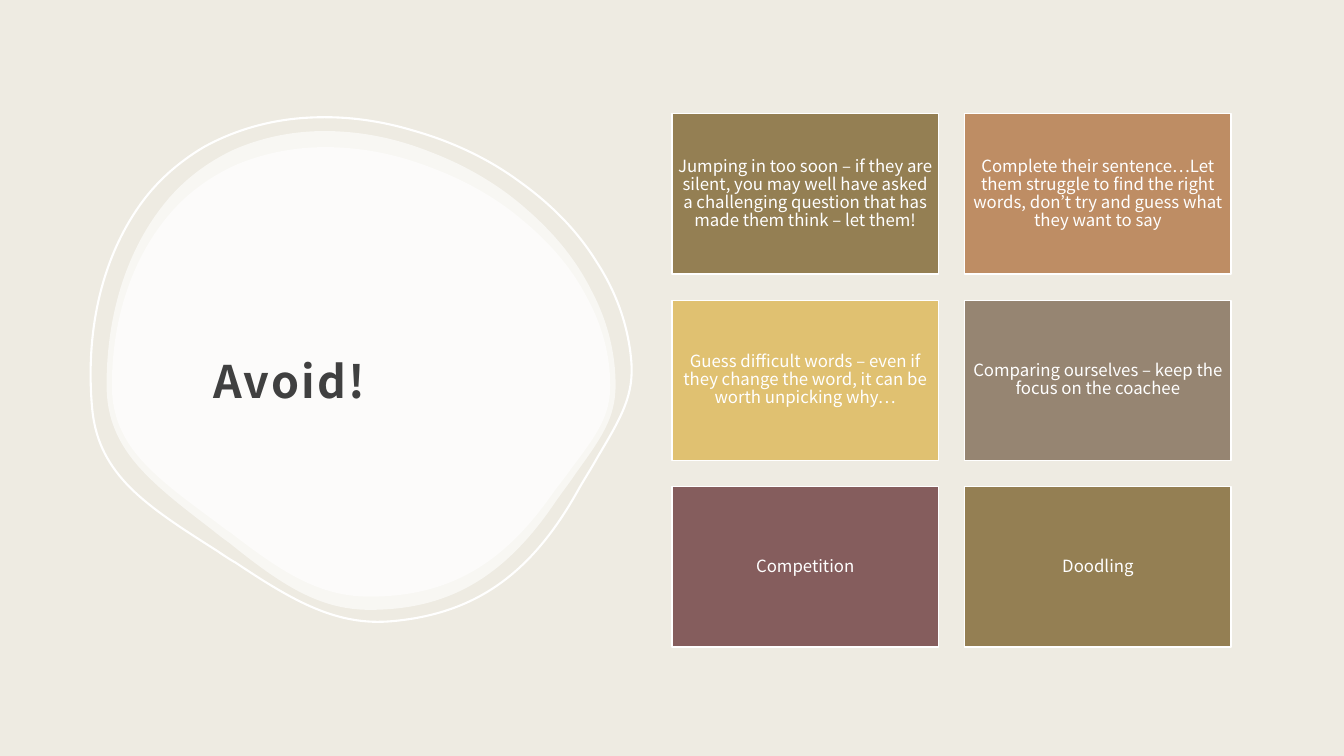
from dataclasses import dataclass
from itertools import chain

from lxml.etree import SubElement
from pptx import Presentation
from pptx.dml.color import RGBColor
from pptx.enum.shapes import MSO_SHAPE as Preset
from pptx.enum.text import MSO_ANCHOR as Anchor, MSO_AUTO_SIZE as AutoSize, PP_ALIGN as Align
from pptx.oxml.ns import qn
from pptx.util import Pt


@dataclass(frozen=True)
class Theme:
    font: str = "Noto Sans CJK JP"
    background: str = "EEEBE2"
    white: str = "FFFFFF"
    title: str = "404040"
    olive: str = "947F53"
    copper: str = "BE8D64"
    gold: str = "E0C171"
    taupe: str = "968572"
    plum: str = "855D5D"
    title_size: float = 32
    card_size: float = 12


THEME = Theme()

CARDS = [
    ("Jumping in too soon – if they are silent, you may well have asked a challenging "
     "question that has made them think – let them!", THEME.olive),
    ("Complete their sentence…Let them struggle to find the right words, "
     "don’t try and guess what they want to say", THEME.copper),
    ("Guess difficult words – even if they change the word, "
     "it can be worth unpicking why…", THEME.gold),
    ("Comparing ourselves – keep the focus on the coachee", THEME.taupe),
    ("Competition", THEME.plum),
    ("Doodling", THEME.olive),
]

PEBBLE_SIZE = (505, 475)
PEBBLE_START = (216, 0)
PEBBLE_CURVES = [
    ((183, 0), (152, 7), (125, 19)),
    ((100, 31), (77, 48), (59, 70)),
    ((21, 116), (0, 180), (0, 252)),
    ((0, 280), (8, 303), (26, 326)),
    ((45, 350), (74, 372), (104, 395)),
    ((109, 399), (115, 404), (121, 408)),
    ((172, 449), (210, 475), (261, 475)),
    ((339, 475), (395, 443), (446, 367)),
    ((453, 357), (460, 348), (466, 339)),
    ((492, 303), (505, 284), (505, 252)),
    ((505, 220), (497, 188), (481, 158)),
    ((466, 128), (444, 101), (416, 77)),
    ((389, 53), (356, 34), (322, 21)),
    ((287, 7), (252, 0), (216, 0)),
]


def rgb(color):
    return RGBColor.from_string(color)


def bend_segments(shape):
    segments = list(shape._element.iter(qn("a:lnTo")))
    outline = segments[0].getparent()
    for first in range(0, len(segments), 3):
        curve = SubElement(outline, qn("a:cubicBezTo"))
        segments[first].addprevious(curve)
        for segment in segments[first:first + 3]:
            curve.append(segment[0])
            outline.remove(segment)


def add_pebble(slide, box):
    left, top, width, height = box
    scale_x, scale_y = width / PEBBLE_SIZE[0], height / PEBBLE_SIZE[1]
    points = [(Pt(left + x * scale_x), Pt(top + y * scale_y))
              for x, y in chain([PEBBLE_START], *PEBBLE_CURVES)]
    builder = slide.shapes.build_freeform(*points[0], scale=1.0)
    builder.add_line_segments(points[1:], close=True)
    shape = builder.convert_to_shape()
    bend_segments(shape)
    shape.shadow.inherit = False
    return shape


def add_backdrop(slide, box):
    left, top, width, height = box
    for inset_x, inset_top, inset_bottom in ((12, 12.2, 9.4), (15.8, 23.7, 18.8)):
        pebble = add_pebble(slide, (left + inset_x, top + inset_top,
                                    width - 2 * inset_x + 1, height - inset_top - inset_bottom))
        pebble.fill.solid()
        pebble.fill.fore_color.rgb = rgb(THEME.white)
        color = pebble.fill._xPr.find(qn("a:solidFill"))[0]
        SubElement(color, qn("a:alpha"), val="60000")
        pebble.line.fill.background()
    outline = add_pebble(slide, box)
    outline.rotation = 355
    outline.fill.background()
    outline.line.color.rgb = rgb(THEME.white)
    outline.line.width = Pt(1.5)


def write_text(shape, text, size, color, align, spacing, inset):
    frame = shape.text_frame
    frame.word_wrap = True
    frame.auto_size = AutoSize.NONE
    frame.vertical_anchor = Anchor.MIDDLE
    frame.margin_left = frame.margin_right = frame.margin_top = frame.margin_bottom = Pt(inset)
    paragraph = frame.paragraphs[0]
    paragraph.alignment = align
    paragraph.line_spacing = spacing
    run = paragraph.add_run()
    run.text = text
    run.font.name = THEME.font
    run.font.size = Pt(size)
    run.font.color.rgb = rgb(color)
    return paragraph, run


def add_title(slide, box):
    title = slide.shapes.title
    title._element.getparent().append(title._element)
    title.left, title.top, title.width, title.height = map(Pt, box)
    paragraph, run = write_text(title, "Avoid!", THEME.title_size, THEME.title,
                                Align.LEFT, 1.3, 8.64)
    title.text_frame.margin_bottom = Pt(7.2)
    run.font.bold = True
    run.font._element.set("spc", "150")


def add_cards(slide, box, columns=2, gap=18.8):
    left, top, width, height = box
    rows = len(CARDS) // columns
    card_width = (width - gap * (columns - 1)) / columns
    card_height = (height - gap * (rows - 1)) / rows
    for index, (text, color) in enumerate(CARDS):
        row, column = divmod(index, columns)
        card = slide.shapes.add_shape(
            Preset.RECTANGLE,
            Pt(left + column * (card_width + gap)), Pt(top + row * (card_height + gap)),
            Pt(card_width), Pt(card_height))
        card.shadow.inherit = False
        card.fill.solid()
        card.fill.fore_color.rgb = rgb(color)
        card.line.color.rgb = rgb(THEME.white)
        card.line.width = Pt(1)
        paragraph, run = write_text(card, text, THEME.card_size, THEME.white,
                                    Align.CENTER, 0.9, 3.6)
        paragraph.space_after = Pt(4.2)


def build_avoid_slide(presentation):
    slide = presentation.slides.add_slide(presentation.slide_layouts[5])
    slide.background.fill.solid()
    slide.background.fill.fore_color.rgb = rgb(THEME.background)
    add_backdrop(slide, (64.1, 81.4, 386.6, 363.6))
    add_title(slide, (144, 149.8, 260.6, 231.1))
    add_cards(slide, (480.1, 81.3, 399.3, 380.8))


def main():
    presentation = Presentation()
    presentation.slide_width, presentation.slide_height = Pt(960), Pt(540)
    build_avoid_slide(presentation)
    presentation.save("out.pptx")


if __name__ == "__main__":
    main()
